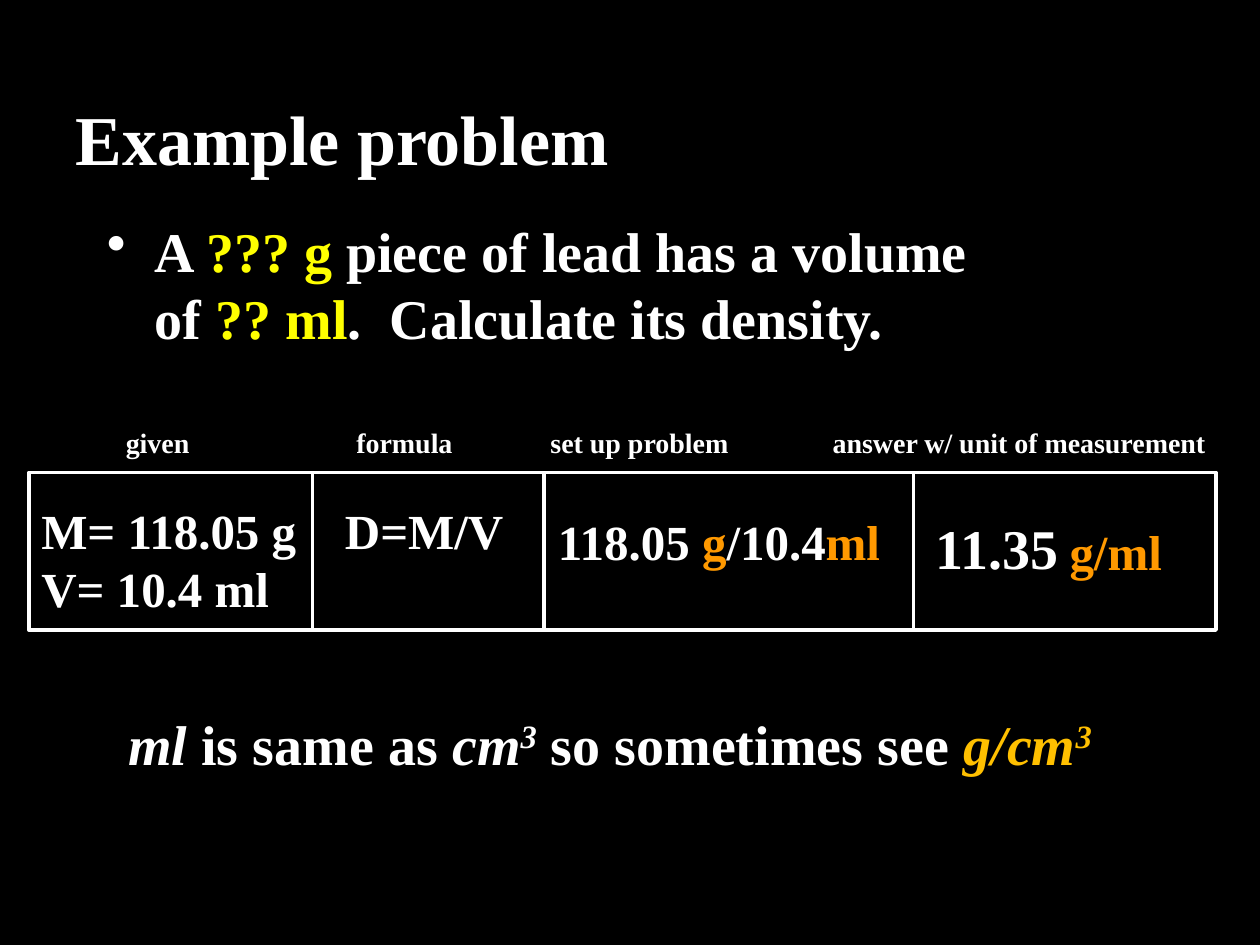
from dataclasses import dataclass

from lxml.etree import SubElement
from pptx import Presentation
from pptx.dml.color import RGBColor
from pptx.enum.shapes import MSO_CONNECTOR, MSO_SHAPE
from pptx.enum.text import MSO_ANCHOR, MSO_AUTO_SIZE, PP_ALIGN
from pptx.oxml.ns import qn
from pptx.slide import Slide
from pptx.text.text import _Paragraph
from pptx.util import Inches, Pt

BLACK = RGBColor(0x00, 0x00, 0x00)
WHITE = RGBColor(0xFF, 0xFF, 0xFF)
YELLOW = RGBColor(0xFF, 0xFF, 0x00)
ORANGE = RGBColor(0xFF, 0x99, 0x00)
GOLD = RGBColor(0xFF, 0xC0, 0x00)
FONT = "Times New Roman"
LINE_WIDTH = Pt(2.25)

FRAME_LEFT, FRAME_TOP, FRAME_WIDTH, FRAME_HEIGHT = 0.23, 3.75, 9.42, 1.25
DIVIDERS = (2.48, 4.32, 7.25)


@dataclass(frozen=True)
class Part:
    """A stretch of text with its own look."""
    text: str
    color: RGBColor = WHITE
    italic: bool = False
    superscript: bool = False


@dataclass(frozen=True)
class Block:
    """A text box: place in inches, size in points, parts by paragraph."""
    box: tuple[float, float, float, float]
    size: int
    paragraphs: tuple[tuple[Part, ...], ...]
    wrap: bool = False
    tabs: tuple[float, ...] = ()
    bullet: bool = False


PROBLEM = Block((0.75, 1.67, 7.83, 1.17), 32, ((
    Part("A "), Part("??? g ", YELLOW), Part("piece of lead has a volume of "),
    Part("?? ml", YELLOW), Part(".  Calculate its density.")),),
    wrap=True, bullet=True)
GIVEN_AND_FORMULA = Block((0.23, 3.92, 4.93, 1.04), 28, (
    (Part("M= 118.05 g\tD=M/V"),), (Part("V= 10.4 ml"),)),
    wrap=True, tabs=(2.41,))
HEADINGS = Block((0.9, 3.33, 8.82, 0.37), 16, (
    (Part("given\tformula\tset up problem\tanswer w/ unit of measurement"),),),
    wrap=True, tabs=(1.83, 3.37, 5.61))
UNIT_NOTE = Block((0.92, 5.58, 7.96, 0.64), 32, ((
    Part("ml", italic=True), Part(" is same as "), Part("cm", italic=True),
    Part("3", italic=True, superscript=True), Part(" so sometimes see "),
    Part("g/cm", GOLD, italic=True),
    Part("3", GOLD, italic=True, superscript=True)),))
SETUP = Block((4.33, 4.01, 2.79, 0.57), 28, ((
    Part("118.05 "), Part("g", ORANGE), Part("/10.4"), Part("ml", ORANGE)),))
ANSWER = Block((7.33, 4.03, 1.19, 0.64), 32, ((Part("11.35"),),))
ANSWER_UNIT = Block((8.39, 4.09, 0.94, 0.57), 28, ((Part("g/ml", ORANGE),),))


def set_font(paragraph: _Paragraph, size: int) -> None:
    font = paragraph.font
    font.name, font.size, font.bold = FONT, Pt(size), True
    font.color.rgb = WHITE


def add_bullet(paragraph: _Paragraph) -> None:
    properties = paragraph._p.get_or_add_pPr()
    properties.set("marL", str(Inches(0.38)))
    properties.set("indent", str(-Inches(0.38)))
    SubElement(properties, qn("a:buChar")).set("char", "•")


def add_tabs(paragraph: _Paragraph, stops: tuple[float, ...]) -> None:
    tab_list = SubElement(paragraph._p.get_or_add_pPr(), qn("a:tabLst"))
    for stop in stops:
        tab = SubElement(tab_list, qn("a:tab"))
        tab.set("pos", str(Inches(stop)))
        tab.set("algn", "l")


def add_block(slide: Slide, block: Block) -> None:
    frame = slide.shapes.add_textbox(*map(Inches, block.box)).text_frame
    frame.word_wrap = block.wrap
    for index, parts in enumerate(block.paragraphs):
        paragraph = frame.add_paragraph() if index else frame.paragraphs[0]
        if block.bullet:
            paragraph.space_before = Pt(block.size * 0.2)
            add_bullet(paragraph)
        if block.tabs:
            add_tabs(paragraph, block.tabs)
        set_font(paragraph, block.size)
        for part in parts:
            run = paragraph.add_run()
            run.text = part.text
            if part.color != WHITE:
                run.font.color.rgb = part.color
            if part.italic:
                run.font.italic = True
            if part.superscript:
                run._r.get_or_add_rPr().set("baseline", "30000")


def add_title(slide: Slide, text: str) -> None:
    title = slide.shapes.title
    title.left, title.top = Inches(0.5), Inches(0.83)
    title.width, title.height = Inches(9), Inches(0.53)
    frame = title.text_frame
    frame.text = text
    frame.auto_size = MSO_AUTO_SIZE.NONE
    frame.vertical_anchor = MSO_ANCHOR.MIDDLE
    frame.paragraphs[0].alignment = PP_ALIGN.LEFT
    set_font(frame.paragraphs[0], 40)


def add_frame(slide: Slide) -> None:
    frame = slide.shapes.add_shape(
        MSO_SHAPE.RECTANGLE, Inches(FRAME_LEFT), Inches(FRAME_TOP),
        Inches(FRAME_WIDTH), Inches(FRAME_HEIGHT))
    frame.shadow.inherit = False
    frame.fill.background()
    frame.line.color.rgb = WHITE
    frame.line.width = LINE_WIDTH


def add_divider(slide: Slide, x: float) -> None:
    divider = slide.shapes.add_connector(
        MSO_CONNECTOR.STRAIGHT, Inches(x), Inches(FRAME_TOP),
        Inches(x), Inches(FRAME_TOP + FRAME_HEIGHT))
    divider.line.color.rgb = WHITE
    divider.line.width = LINE_WIDTH
    SubElement(divider._element.spPr, qn("a:effectLst"))


def main() -> None:
    presentation = Presentation()
    presentation.slide_width = Inches(10)
    presentation.slide_height = Inches(7.5)
    slide = presentation.slides.add_slide(presentation.slide_layouts[5])
    slide.background.fill.solid()
    slide.background.fill.fore_color.rgb = BLACK

    # Title and question
    add_title(slide, "Example problem")
    add_block(slide, PROBLEM)

    # Worked solution in four cells
    add_frame(slide)
    add_block(slide, GIVEN_AND_FORMULA)
    for x in DIVIDERS:
        add_divider(slide, x)

    # Headings, unit note and the results
    for block in (HEADINGS, UNIT_NOTE, SETUP, ANSWER, ANSWER_UNIT):
        add_block(slide, block)

    presentation.save("out.pptx")


if __name__ == "__main__":
    main()
